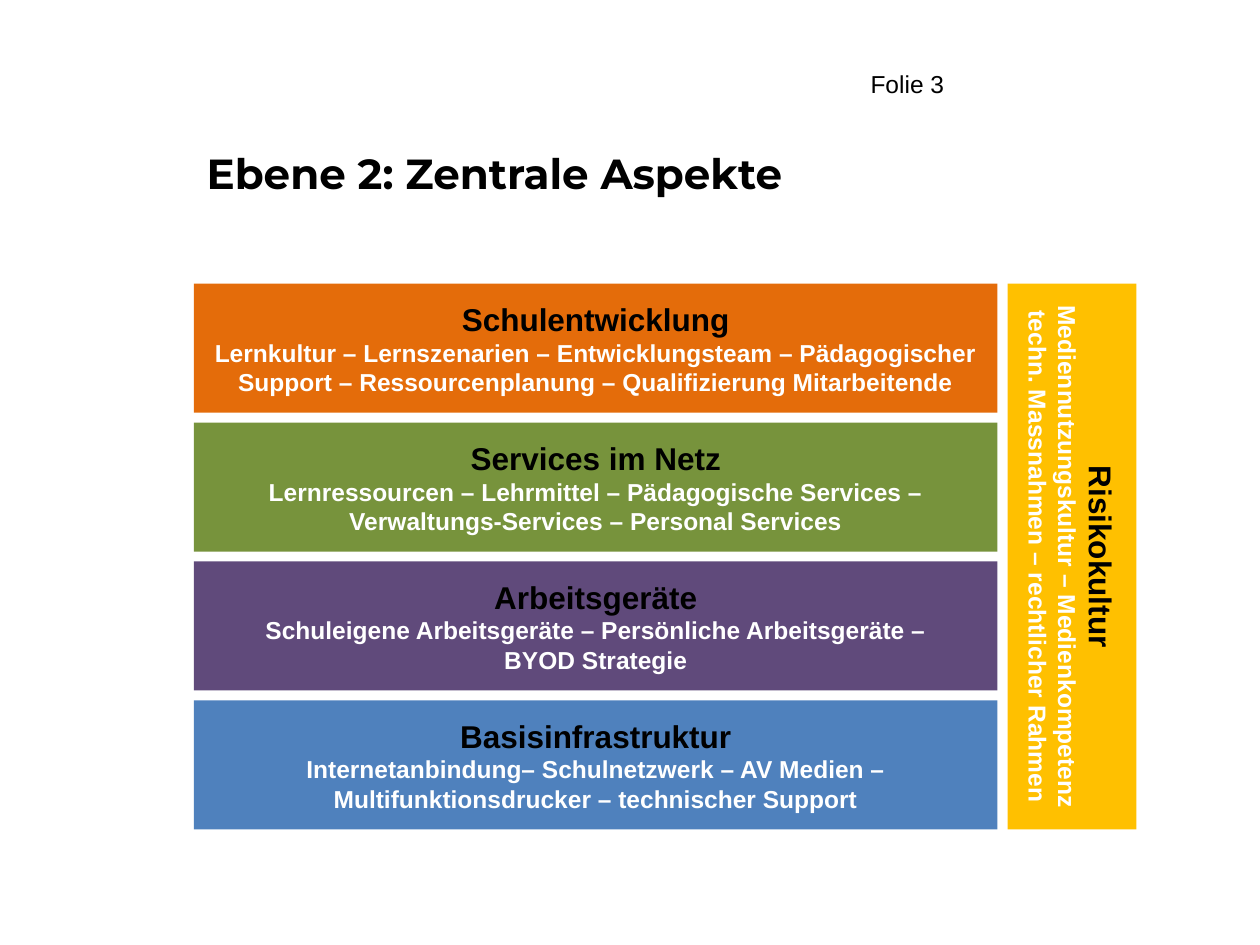
from pptx import Presentation
from pptx.dml.color import RGBColor
from pptx.enum.shapes import MSO_SHAPE
from pptx.enum.text import MSO_ANCHOR, PP_ALIGN
from pptx.util import Cm, Pt

RECT = MSO_SHAPE.RECTANGLE
TOP, MIDDLE = MSO_ANCHOR.TOP, MSO_ANCHOR.MIDDLE
LEFT, CENTER = PP_ALIGN.LEFT, PP_ALIGN.CENTER

COLORS = {
    "black": "000000",
    "white": "FFFFFF",
    "orange": "E46C0A",
    "green": "77933C",
    "purple": "604A7B",
    "blue": "4F81BD",
    "yellow": "FFC000",
}

# Layer grid in cm
LAYER_LEFT, LAYER_TOP = 3.91, 5.72
LAYER_WIDTH, LAYER_HEIGHT = 16.2, 2.6
GAP = 0.2

LAYERS = [
    ("orange", "Schulentwicklung",
     ["Lernkultur – Lernszenarien – Entwicklungsteam – Pädagogischer "
      "Support – Ressourcenplanung – Qualifizierung Mitarbeitende"]),
    ("green", "Services im Netz",
     ["Lernressourcen – Lehrmittel – Pädagogische Services – "
      "Verwaltungs-Services – Personal Services"]),
    ("purple", "Arbeitsgeräte",
     ["Schuleigene Arbeitsgeräte – Persönliche Arbeitsgeräte –",
      "BYOD Strategie"]),
    ("blue", "Basisinfrastruktur",
     ["Internetanbindung– Schulnetzwerk – AV Medien – "
      "Multifunktionsdrucker – technischer Support"]),
]


class SlideBuilder:
    heading_font = "Montserrat"
    body_font = "Arial"

    def __init__(self, slide):
        self.slide = slide

    def run(self, p, text, size, color="black", bold=False, font=None):
        r = p.add_run()
        r.text = text
        r.font.name = font or self.body_font
        r.font.size = Pt(size)
        r.font.bold = bold
        r.font.color.rgb = RGBColor.from_string(COLORS[color])

    def title(self, text, left, top, width, height):
        sp = self.slide.shapes.title
        sp.left, sp.top, sp.width, sp.height = map(Cm, (left, top, width, height))
        tf = sp.text_frame
        tf.vertical_anchor = TOP
        p = tf.paragraphs[0]
        p.alignment = LEFT
        self.run(p, text, 24, bold=True, font=self.heading_font)

    def label(self, text, left, top, width, height):
        sp = self.slide.shapes.add_textbox(*map(Cm, (left, top, width, height)))
        tf = sp.text_frame
        tf.word_wrap = True
        self.run(tf.paragraphs[0], text, 14)

    def block(self, color, heading, lines, left, top, width, height, rotation=0):
        sp = self.slide.shapes.add_shape(RECT, *map(Cm, (left, top, width, height)))
        sp.rotation = rotation
        sp.shadow.inherit = False
        sp.fill.solid()
        sp.fill.fore_color.rgb = RGBColor.from_string(COLORS[color])
        sp.line.fill.background()
        tf = sp.text_frame
        tf.word_wrap = True
        tf.vertical_anchor = MIDDLE
        p = tf.paragraphs[0]
        p.alignment = CENTER
        self.run(p, heading, 18, bold=True)
        p = tf.add_paragraph()
        p.alignment = CENTER
        for i, line in enumerate(lines):
            if i:
                p.add_line_break()
            self.run(p, line, 14, "white", bold=True)


def main():
    prs = Presentation()
    prs.slide_width, prs.slide_height = Cm(25.4), Cm(19.05)
    s = SlideBuilder(prs.slides.add_slide(prs.slide_layouts[5]))

    # Slide number and title
    s.label("Folie 3", 17.3, 1.27, 8.4, 0.86)
    s.title("Ebene 2: Zentrale Aspekte", LAYER_LEFT, 2.84, 19.96, 1.5)

    # Stacked layers
    pitch = LAYER_HEIGHT + GAP
    for i, (color, heading, lines) in enumerate(LAYERS):
        s.block(color, heading, lines, LAYER_LEFT, LAYER_TOP + i * pitch,
                LAYER_WIDTH, LAYER_HEIGHT)

    # Upright column beside the layers, turned about its centre
    length = len(LAYERS) * pitch - GAP
    center_x = LAYER_LEFT + LAYER_WIDTH + GAP + LAYER_HEIGHT / 2
    center_y = LAYER_TOP + length / 2
    s.block("yellow", "Risikokultur",
            ["Mediennutzungskultur – Medienkompetenz "
             "techn. Massnahmen – rechtlicher Rahmen"],
            center_x - length / 2, center_y - LAYER_HEIGHT / 2,
            length, LAYER_HEIGHT, rotation=90)

    prs.save("out.pptx")


if __name__ == "__main__":
    main()
